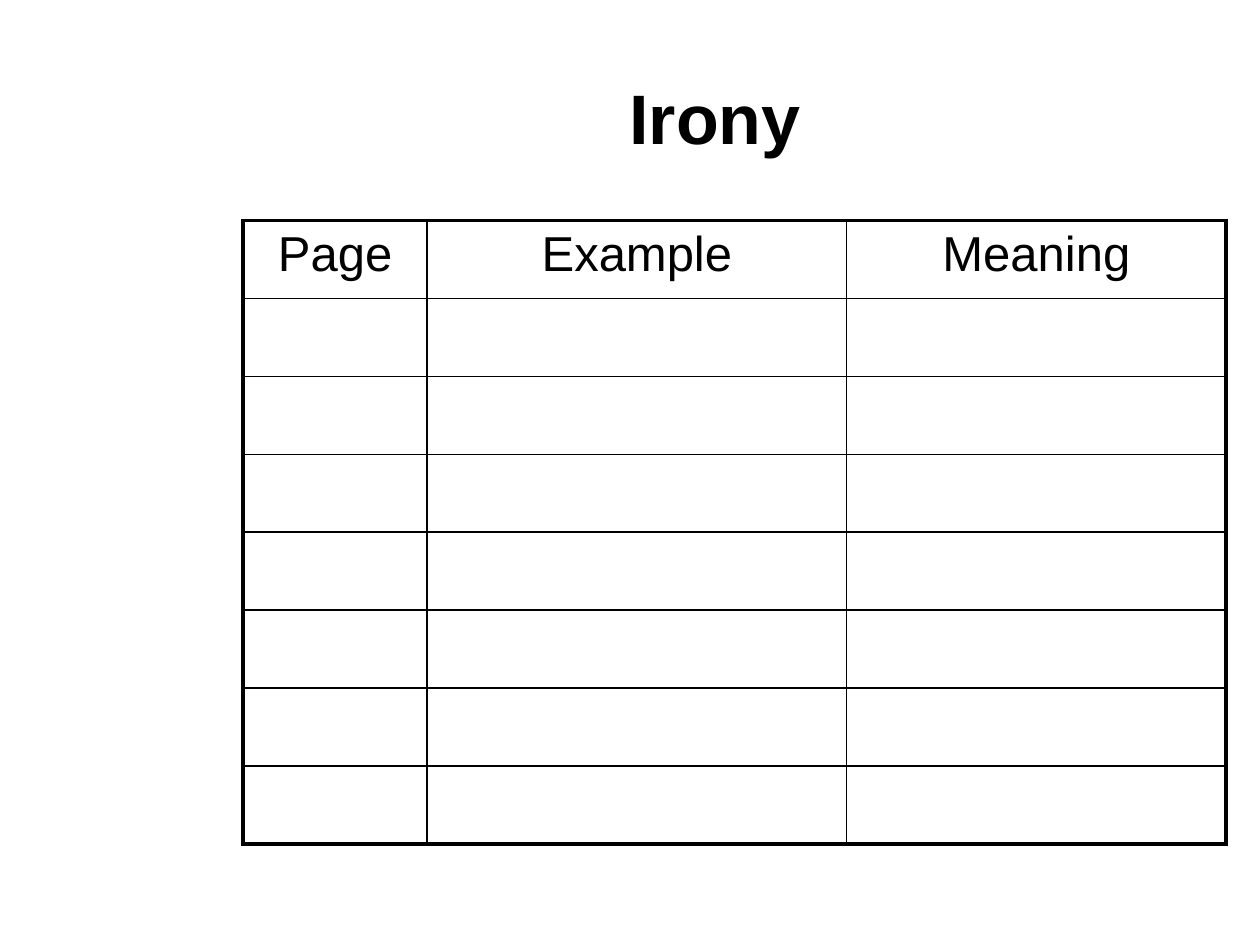
import pptx
import pptx.dml.color
import pptx.enum.text
import pptx.oxml.ns
import pptx.util
import lxml.etree

BLACK = "000000"
FONT = "Arial"
THIN, THICK = 1, 2.25
HEADINGS = ["Page", "Example", "Meaning"]
COLUMN_WIDTHS = [1.46, 3.33, 3.01]
ROW_COUNT = 8
TITLE_BOX = (1.85, 0.3, 7.65, 1.25)
TABLE_BOX = (1.93, 1.75, 7.8, 4.95)


def color(hex_value):
    """Return the colour for a hex string."""
    return pptx.dml.color.RGBColor.from_string(hex_value)


def inches(box):
    """Convert a box in inches to lengths."""
    return [pptx.util.Inches(value) for value in box]


def format_paragraph(paragraph, size, bold=False):
    """Centre a paragraph and set its font."""
    paragraph.alignment = pptx.enum.text.PP_ALIGN.CENTER
    paragraph.font.name = FONT
    paragraph.font.size = pptx.util.Pt(size)
    paragraph.font.bold = bold
    paragraph.font.color.rgb = color(BLACK)


def set_borders(cell, widths):
    """Draw cell borders from a mapping of side to width in points."""
    properties = cell._tc.get_or_add_tcPr()
    qualified = pptx.oxml.ns.qn
    for side in "LRTB":
        line = lxml.etree.SubElement(properties, qualified(f"a:ln{side}"))
        line.set("w", str(pptx.util.Pt(widths[side])))
        fill = lxml.etree.SubElement(line, qualified("a:solidFill"))
        lxml.etree.SubElement(fill, qualified("a:srgbClr")).set("val", BLACK)


def add_title(slide, box, text):
    """Place the slide title in the given box."""
    title = slide.shapes.title
    title.left, title.top, title.width, title.height = inches(box)
    title.text_frame.text = text
    title.text_frame.vertical_anchor = pptx.enum.text.MSO_ANCHOR.MIDDLE
    format_paragraph(title.text_frame.paragraphs[0], 40, bold=True)


def add_worksheet(slide, box, headings):
    """Place a ruled table with headings and empty rows in the given box."""
    column_count = len(headings)
    table = slide.shapes.add_table(ROW_COUNT, column_count, *inches(box)).table
    table.first_row = table.horz_banding = False
    for column, width in zip(table.columns, COLUMN_WIDTHS):
        column.width = pptx.util.Inches(width)
    for row_index in range(ROW_COUNT):
        for column_index in range(column_count):
            cell = table.cell(row_index, column_index)
            outer = {
                "L": column_index == 0,
                "R": column_index == column_count - 1,
                "T": row_index == 0,
                "B": row_index == ROW_COUNT - 1,
            }
            set_borders(cell, {side: THICK if edge else THIN for side, edge in outer.items()})
            cell.fill.background()
    for cell, heading in zip(table.rows[0].cells, headings):
        cell.text = heading
        format_paragraph(cell.text_frame.paragraphs[0], 28)


def main():
    """Build and save the presentation."""
    presentation = pptx.Presentation()
    presentation.slide_width = pptx.util.Inches(10)
    presentation.slide_height = pptx.util.Inches(7.5)
    slide = presentation.slides.add_slide(presentation.slide_layouts[5])
    add_title(slide, TITLE_BOX, "Irony")
    add_worksheet(slide, TABLE_BOX, HEADINGS)
    presentation.save("out.pptx")


if __name__ == "__main__":
    main()
